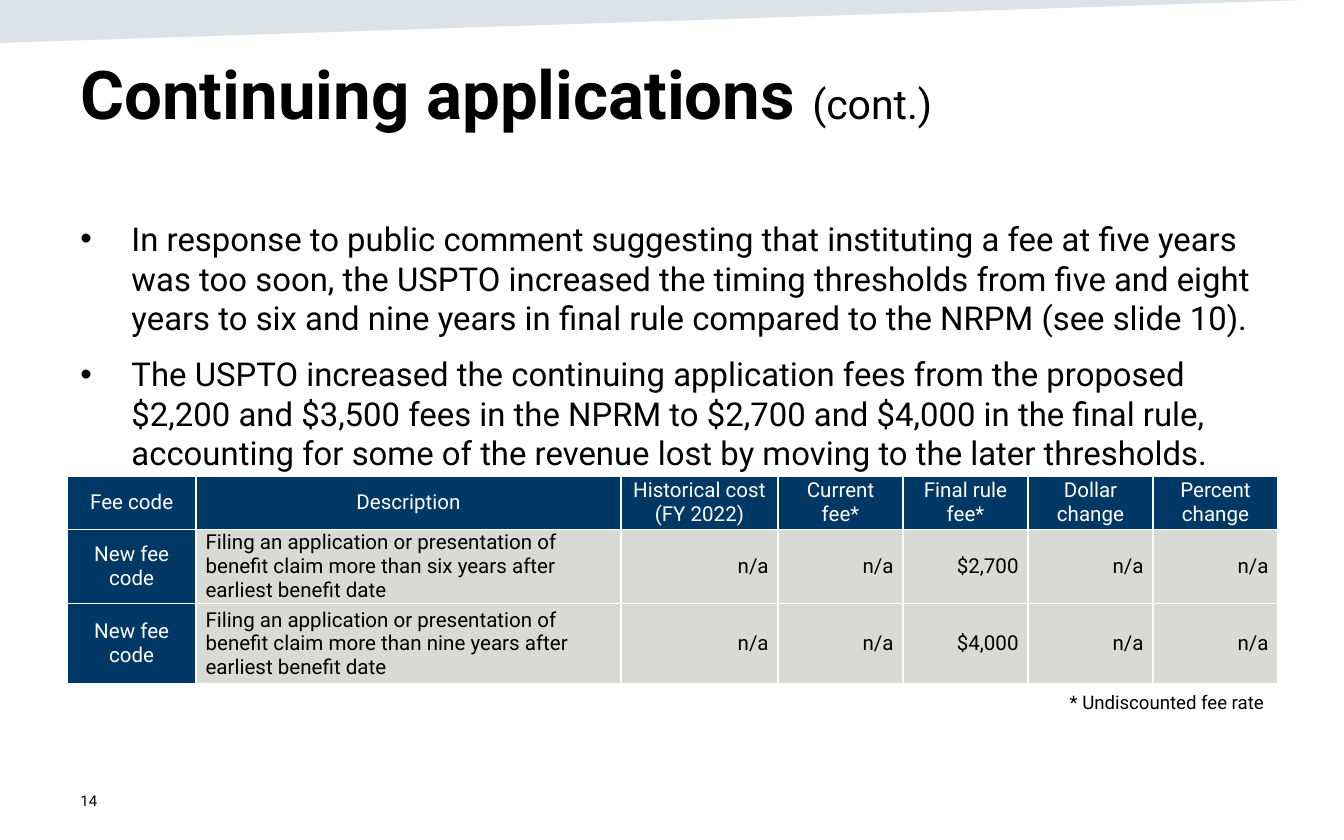
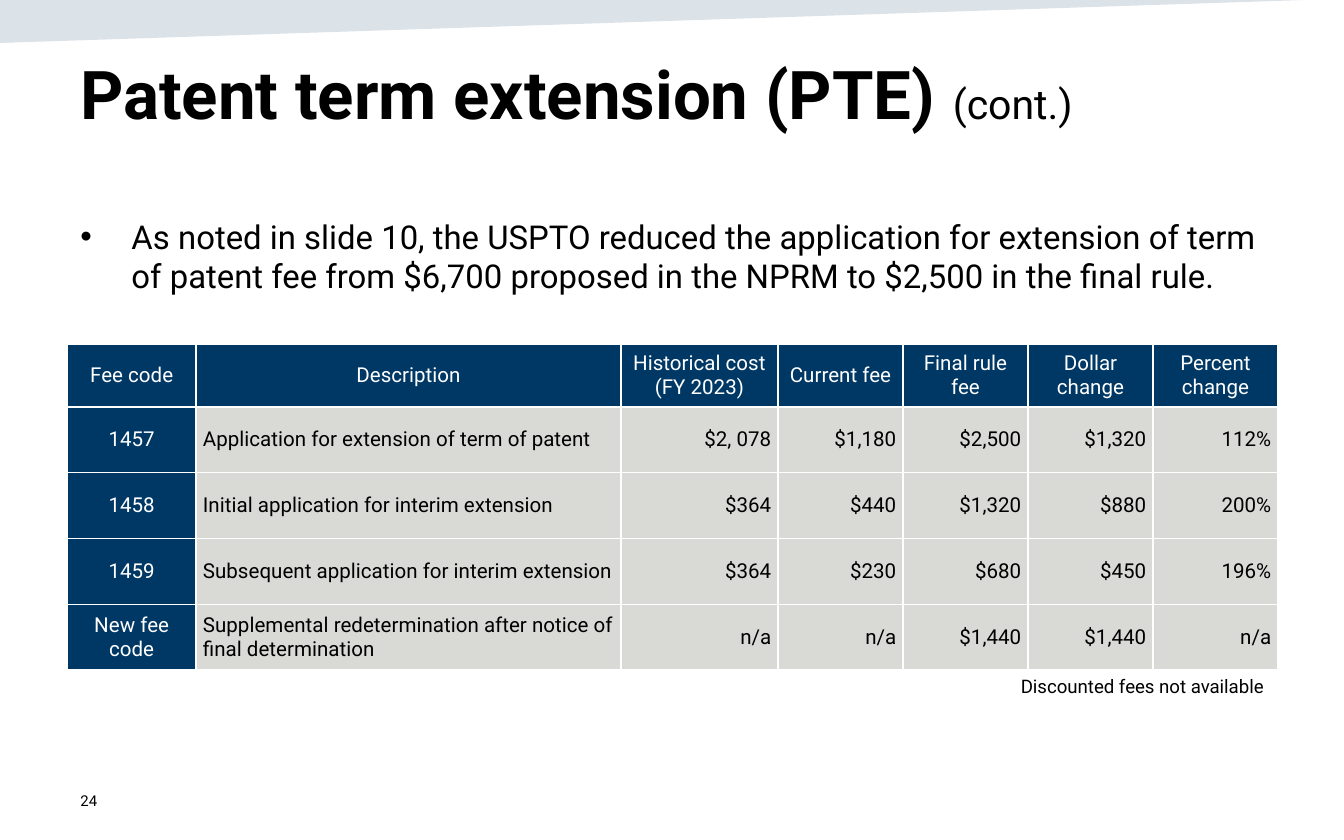
from dataclasses import dataclass

from lxml import etree
from pptx import Presentation
from pptx.dml.color import RGBColor
from pptx.enum.text import MSO_ANCHOR, PP_ALIGN
from pptx.oxml.ns import qn
from pptx.util import Inches, Pt

LEFT, MID, RIGHT = PP_ALIGN.LEFT, PP_ALIGN.CENTER, PP_ALIGN.RIGHT
TOP, CENTER = MSO_ANCHOR.TOP, MSO_ANCHOR.MIDDLE


@dataclass(frozen=True)
class Theme:
    font: str = "Roboto"
    ink: str = "000000"
    white: str = "FFFFFF"
    navy: str = "003865"
    gray: str = "D9D9D6"
    band: str = "164469"
    alpha: int = 15000
    title: float = 36
    cont: float = 22
    body: float = 17.6
    cell: float = 11
    note: float = 10
    page: float = 8


THEME = Theme()
COLS = [0.96, 3.16, 1.17] + [0.93] * 4


def add_run(para, text, size, color=THEME.ink, bold=False):
    run = para.add_run()
    run.text = text
    font = run.font
    font.name, font.size, font.bold = THEME.font, Pt(size), bold
    font.color.rgb = RGBColor.from_string(color)


def add_box(slide, left, top, width, height, anchor=TOP):
    box = slide.shapes.add_textbox(
        Inches(left), Inches(top), Inches(width), Inches(height))
    frame = box.text_frame
    frame.word_wrap = True
    frame.vertical_anchor = anchor
    return frame


def add_band(slide):
    build = slide.shapes.build_freeform(Inches(0), Inches(-0.01))
    build.add_line_segments(
        [(Inches(0), Inches(0.32)), (Inches(10.02), Inches(-0.01))])
    band = build.convert_to_shape()
    band.shadow.inherit = False
    band.line.fill.background()
    band.fill.solid()
    band.fill.fore_color.rgb = RGBColor.from_string(THEME.band)
    color = next(band._element.spPr.iter(qn("a:srgbClr")))
    etree.SubElement(color, qn("a:alpha"), val=str(THEME.alpha))


def add_title(slide, text):
    para = add_box(slide, 0.5, 0.34, 9, 1.04).paragraphs[0]
    add_run(para, text + " ", THEME.title, bold=True)
    add_run(para, "(cont.)", THEME.cont)


def add_list(slide, top, height, items):
    frame = add_box(slide, 0.5, top, 9.01, height)
    for i, item in enumerate(items):
        para = frame.add_paragraph() if i else frame.paragraphs[0]
        para.space_before = Pt(9)
        props = para._p.get_or_add_pPr()
        props.set("marL", str(Inches(0.38)))
        props.set("indent", str(-Inches(0.38)))
        etree.SubElement(props, qn("a:buFont"), typeface="Arial")
        etree.SubElement(props, qn("a:buChar"), char="•")
        add_run(para, item, THEME.body)


def add_edges(cell):
    props = cell._tc.get_or_add_tcPr()
    for i, side in enumerate(["lnL", "lnR", "lnT", "lnB"]):
        line = etree.Element(qn("a:" + side), w=str(Pt(1)))
        fill = etree.SubElement(line, qn("a:solidFill"))
        etree.SubElement(fill, qn("a:srgbClr"), val=THEME.white)
        props.insert(i, line)


def fill_cell(cell, text, pads, row, col):
    head, dark = row == 0, row == 0 or col == 0
    cell.vertical_anchor = CENTER
    cell.margin_left = cell.margin_right = Inches(pads[0])
    cell.margin_top = cell.margin_bottom = Inches(pads[1])
    cell.fill.solid()
    cell.fill.fore_color.rgb = RGBColor.from_string(
        THEME.navy if dark else THEME.gray)
    frame = cell.text_frame
    for i, line in enumerate(text.split("\n")):
        para = frame.add_paragraph() if i else frame.paragraphs[0]
        para.alignment = MID if dark else LEFT if col == 1 else RIGHT
        if not head:
            para.space_before = Pt(6)
            if col == 0:
                para.space_after = Pt(6)
        add_run(para, line, THEME.cell, THEME.white if dark else THEME.ink)
    add_edges(cell)


def add_grid(slide, top, tall, pads, rows):
    shape = slide.shapes.add_table(
        len(rows), len(COLS), Inches(0.5), Inches(top),
        Inches(sum(COLS)), Inches(sum(tall)))
    table = shape.table
    table.first_row = table.horz_banding = False
    for col, width in zip(table.columns, COLS):
        col.width = Inches(width)
    for r, (height, row) in enumerate(zip(tall, rows)):
        table.rows[r].height = Inches(height)
        for c, text in enumerate(row):
            fill_cell(table.cell(r, c), text, pads, r, c)


def add_note(slide, left, top, text):
    para = add_box(slide, left, top, 9.5 - left, 0.27).paragraphs[0]
    para.alignment = RIGHT
    add_run(para, text, THEME.note)


def add_page(slide, number):
    frame = add_box(slide, 0.5, 5.79, 2.25, 0.33, CENTER)
    add_run(frame.paragraphs[0], number, THEME.page)


def add_slide(deck, title, number):
    slide = deck.slides.add_slide(deck.slide_layouts[6])
    add_band(slide)
    add_title(slide, title)
    add_page(slide, number)
    return slide


def heads(year, mark=""):
    return ["Fee code", "Description", f"Historical cost\n(FY {year})",
            f"Current fee{mark}", f"Final rule fee{mark}",
            "Dollar change", "Percent change"]


def filing(term, fee):
    text = ("Filing an application or presentation of benefit claim more "
            f"than {term} years after earliest benefit date")
    return ["New fee code", text, "n/a", "n/a", fee, "n/a", "n/a"]


def main():
    deck = Presentation()
    deck.slide_width, deck.slide_height = Inches(10), Inches(6.25)

    slide = add_slide(deck, "Continuing applications", "14")
    add_list(slide, 1.58, 1.95, [
        "In response to public comment suggesting that instituting a fee at "
        "five years was too soon, the USPTO increased the timing thresholds "
        "from five and eight years to six and nine years in final rule "
        "compared to the NRPM (see slide 10).",
        "The USPTO increased the continuing application fees from the "
        "proposed $2,200 and $3,500 fees in the NPRM to $2,700 and $4,000 in "
        "the final rule, accounting for some of the revenue lost by moving "
        "to the later thresholds."])
    add_grid(slide, 3.54, [0.4, 0.5, 0.6], (0.07, 0), [
        heads(2022, "*"), filing("six", "$2,700"), filing("nine", "$4,000")])
    add_note(slide, 0.78, 5.09, "* Undiscounted fee rate")

    slide = add_slide(deck, "Patent term extension (PTE)", "24")
    add_list(slide, 1.56, 0.87, [
        "As noted in slide 10, the USPTO reduced the application for "
        "extension of term of patent fee from $6,700 proposed in the NPRM to "
        "$2,500 in the final rule."])
    add_grid(slide, 2.56, [0.4] + [0.49] * 4, (0.05, 0.05), [
        heads(2023),
        ["1457", "Application for extension of term of patent",
         "$2, 078", "$1,180", "$2,500", "$1,320", "112%"],
        ["1458", "Initial application for interim extension",
         "$364", "$440", "$1,320", "$880", "200%"],
        ["1459", "Subsequent application for interim extension",
         "$364", "$230", "$680", "$450", "196%"],
        ["New fee code",
         "Supplemental redetermination after notice of final determination",
         "n/a", "n/a", "$1,440", "$1,440", "n/a"]])
    add_note(slide, 7.18, 4.97, "Discounted fees not available")

    deck.save("out.pptx")


if __name__ == "__main__":
    main()
